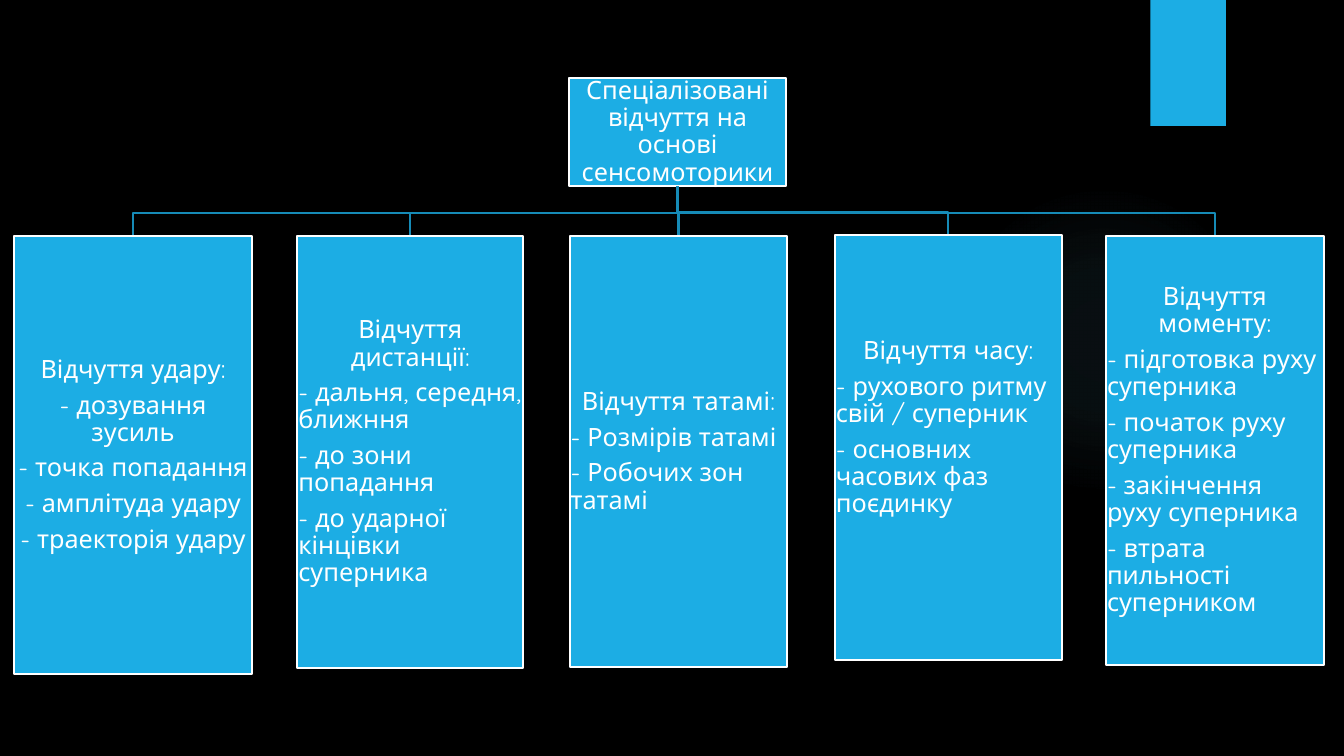
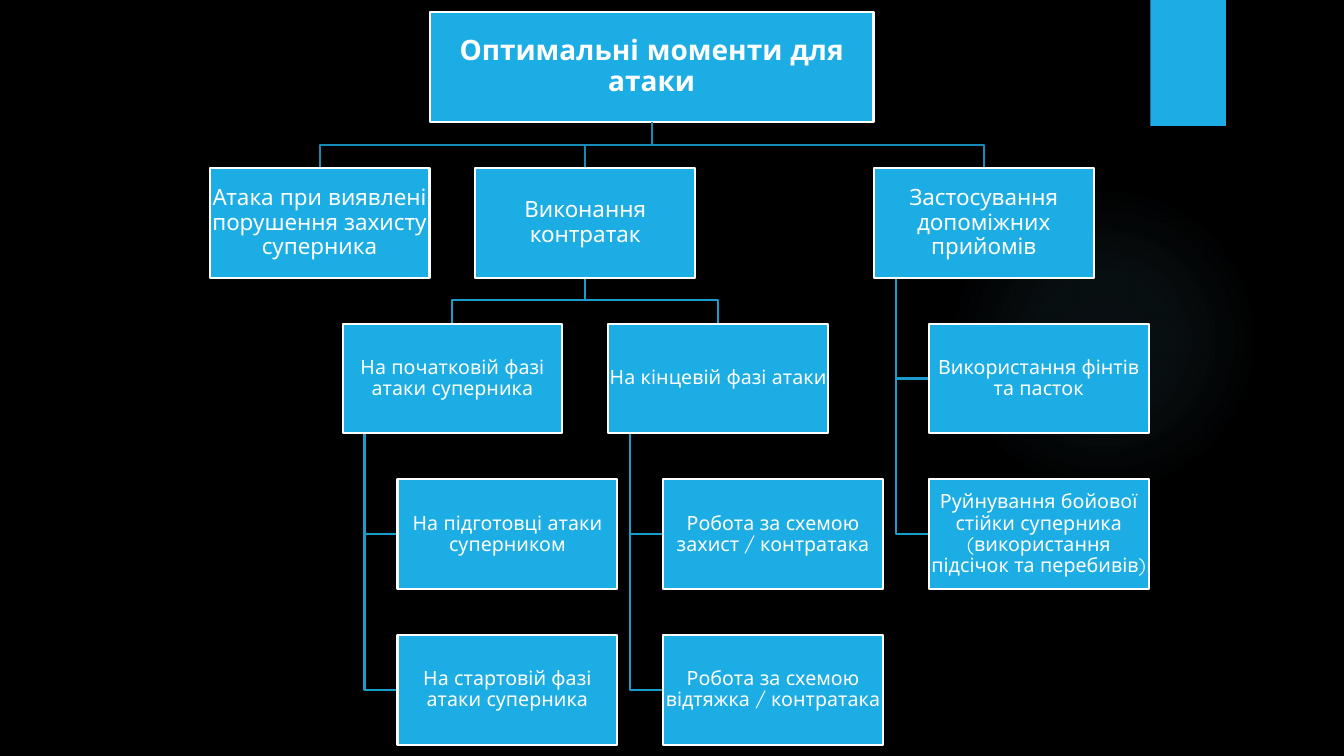
from dataclasses import dataclass, field

from pptx import Presentation
from pptx.dml.color import RGBColor
from pptx.enum.shapes import MSO_SHAPE
from pptx.enum.text import MSO_ANCHOR, MSO_AUTO_SIZE, PP_ALIGN
from pptx.oxml import parse_xml
from pptx.oxml.ns import nsdecls, qn
from pptx.util import Inches, Pt

RECTANGLE, ELLIPSE = MSO_SHAPE.RECTANGLE, MSO_SHAPE.OVAL
CENTER, LEFT = PP_ALIGN.CENTER, PP_ALIGN.LEFT
COLORS = {
    "background": "000000",
    "box": "1CADE4",
    "text": "FFFFFF",
    "glow": "77CEEF",
    "main_branch": "168BB7",
    "sub_branch": "199DCF",
}
FONT_NAME = "Quicksand"
FRAME_FORMAT = {
    "word_wrap": True,
    "auto_size": MSO_AUTO_SIZE.NONE,
    "vertical_anchor": MSO_ANCHOR.MIDDLE,
    "margin_left": Inches(0.01),
    "margin_right": Inches(0.01),
    "margin_top": Inches(0.01),
    "margin_bottom": Inches(0.01),
}
PARAGRAPH_FORMAT = {"line_spacing": 0.9, "space_before": Pt(0), "space_after": Pt(6)}
LINE_WIDTH = Pt(1.5)
GLOW_STOPS = [(0, 7), (36, 6), (69, 0)]


@dataclass
class Box:
    left: float
    top: float
    width: float
    height: float

    @property
    def center(self):
        return self.left + self.width / 2

    @property
    def middle(self):
        return self.top + self.height / 2

    @property
    def bottom(self):
        return self.top + self.height

    def lengths(self):
        return [Inches(v) for v in (self.left, self.top, self.width, self.height)]


@dataclass
class Moment:
    text: str
    column: float
    size: int
    children: list = field(default_factory=list)
    hanging: bool = False


SENSES_ROOT = Box(5.64, 0.77, 2.16, 1.08)
SENSES_TITLE = "Спеціалізовані відчуття на основі сенсомоторики"
SENSES = [
    (Box(10.97, 2.34, 2.16, 4.26), LEFT, 0.01, [
        "Відчуття моменту:", "- підготовка руху суперника", "- початок руху суперника",
        "- закінчення руху суперника", "- втрата пильності суперником"]),
    (Box(8.28, 2.33, 2.25, 4.22), LEFT, 0.4, [
        "Відчуття часу:", "- рухового ритму свій / суперник",
        "- основних часових фаз поєдинку"]),
    (Box(5.65, 2.34, 2.16, 4.28), LEFT, 0.01, [
        "Відчуття татамі:", "- Розмірів татамі", "- Робочих зон татамі"]),
    (Box(2.95, 2.34, 2.24, 4.29), LEFT, 0.01, [
        "Відчуття дистанції:", "- дальня, середня, ближння", "- до зони попадання",
        "- до ударної кінцівки суперника"]),
    (Box(0.14, 2.34, 2.36, 4.35), CENTER, 0.01, [
        "Відчуття удару:", "- дозування зусиль", "- точка попадання",
        "- амплітуда удару", "- траекторія удару"]),
]

MOMENTS_AREA = Box(2.08, 0.12, 9.31, 7.27)
MOMENTS_TITLE = "Оптимальні моменти для атаки"
MOMENTS = [
    Moment("Атака при виявлені порушення захисту суперника", 0, 16),
    Moment("Виконання контратак", 1, 16, [
        Moment("На початковій фазі атаки суперника", 0.5, 14, [
            Moment("На підготовці атаки суперником", 0.5, 14),
            Moment("На стартовій фазі атаки суперника", 0.5, 14)], True),
        Moment("На кінцевій фазі атаки", 1.5, 14, [
            Moment("Робота за схемою захист / контратака", 1.5, 14),
            Moment("Робота за схемою відтяжка / контратака", 1.5, 14)], True)]),
    Moment("Застосування допоміжних прийомів", 2.5, 16, [
        Moment("Використання фінтів та пасток", 2.5, 14),
        Moment("Руйнування бойової стійки суперника (використання підсічок та перебивів)",
               2.5, 14)], True),
]
CELL_WIDTH, CELL_HEIGHT = 2.18, 1.09
ROW_COUNT = 5


def color(name):
    return RGBColor.from_string(COLORS[name])


def apply(target, values):
    for name, value in values.items():
        setattr(target, name, value)


def paint(shape, fill, line=None):
    shape.fill.solid()
    shape.fill.fore_color.rgb = color(fill)
    if line:
        shape.line.color.rgb = color(line)
        shape.line.width = LINE_WIDTH
    else:
        shape.line.fill.background()


def write(frame, texts, size, bold=False, list_align=CENTER):
    apply(frame, FRAME_FORMAT)
    for index, text in enumerate(texts):
        paragraph = frame.paragraphs[0] if index == 0 else frame.add_paragraph()
        apply(paragraph, PARAGRAPH_FORMAT)
        paragraph.alignment = list_align if index else CENTER
        run = paragraph.add_run()
        run.text = text
        apply(run.font, {"name": FONT_NAME, "size": Pt(size), "bold": bold})
        run.font.color.rgb = color("text")


def add_box(slide, box, texts, size, list_align=CENTER):
    shape = slide.shapes.add_shape(RECTANGLE, *box.lengths())
    shape.shadow.inherit = False
    paint(shape, "box", "text")
    write(shape.text_frame, texts, size, list_align=list_align)
    return shape


def place_title(slide, box, text, size, bold=False):
    title = slide.shapes.title
    apply(title, dict(zip(("left", "top", "width", "height"), box.lengths())))
    paint(title, "box", "text")
    write(title.text_frame, [text], size, bold)


def add_branch(slide, points, color_name):
    start, *rest = [(Inches(x), Inches(y)) for x, y in points]
    builder = slide.shapes.build_freeform(*start)
    builder.add_line_segments(rest, close=False)
    branch = builder.convert_to_shape()
    branch.shadow.inherit = False
    branch.fill.background()
    branch.line.color.rgb = color(color_name)
    branch.line.width = LINE_WIDTH


def branch_down(slide, parent, child, color_name):
    turn = child.top - 0.23
    add_branch(slide, [(parent.center, parent.bottom), (parent.center, turn),
                       (child.center, turn), (child.center, child.top)], color_name)


def branch_aside(slide, parent, child, color_name):
    stem = parent.left + parent.width / 10
    add_branch(slide, [(stem, parent.bottom), (stem, child.middle),
                       (child.left, child.middle)], color_name)


def decorate_master(master, slide):
    master.background.fill.solid()
    master.background.fill.fore_color.rgb = color("background")
    glow = slide.shapes.add_shape(ELLIPSE, *Box(9.41, 1.83, 3.08, 3.08).lengths())
    tab = slide.shapes.add_shape(RECTANGLE, *Box(11.41, 0, 0.75, 1.25).lengths())
    for shape in (glow, tab):
        shape.shadow.inherit = False
        paint(shape, "box")
        master.shapes.element.append(shape.element)
    stops = "".join(
        f'<a:gs pos="{position * 1000}"><a:srgbClr val="{COLORS["glow"]}">'
        f'<a:alpha val="{alpha * 1000}"/></a:srgbClr></a:gs>'
        for position, alpha in GLOW_STOPS)
    gradient = parse_xml(
        f'<a:gradFill {nsdecls("a")}><a:gsLst>{stops}</a:gsLst><a:path path="circle">'
        '<a:fillToRect l="50000" t="50000" r="50000" b="50000"/></a:path></a:gradFill>')
    properties = glow.element.spPr
    properties.replace(properties.find(qn("a:solidFill")), gradient)


def senses_slide(slide):
    place_title(slide, SENSES_ROOT, SENSES_TITLE, 18)
    for box, *_ in SENSES:
        branch_down(slide, SENSES_ROOT, box, "main_branch")
    for box, align, bottom_margin, texts in SENSES:
        sense = add_box(slide, box, texts, 18, align)
        sense.text_frame.margin_bottom = Inches(bottom_margin)


def moment_box(area, column, row, indent=0):
    row_step = (area.height - CELL_HEIGHT) / (ROW_COUNT - 1)
    column_step = CELL_WIDTH + row_step - CELL_HEIGHT
    left = area.left + column * column_step + indent * CELL_WIDTH / 4
    return Box(left, area.top + row * row_step, CELL_WIDTH, CELL_HEIGHT)


def add_moment(slide, area, moment, box, row):
    for index, child in enumerate(moment.children):
        child_row = row + 1 + index * moment.hanging
        child_box = moment_box(area, child.column, child_row, moment.hanging)
        connect = branch_aside if moment.hanging else branch_down
        connect(slide, box, child_box, "sub_branch")
        add_moment(slide, area, child, child_box, child_row)
    add_box(slide, box, [moment.text], moment.size)


def moments_slide(slide, area):
    boxes = [moment_box(area, moment.column, 1) for moment in MOMENTS]
    root_width = 4.4
    root_center = (boxes[0].center + boxes[-1].center) / 2
    root = Box(root_center - root_width / 2, area.top, root_width, CELL_HEIGHT)
    place_title(slide, root, MOMENTS_TITLE, 20, True)
    for moment, box in zip(MOMENTS, boxes):
        branch_down(slide, root, box, "main_branch")
        add_moment(slide, area, moment, box, 1)


def main():
    deck = Presentation()
    deck.slide_width, deck.slide_height = Inches(13.33), Inches(7.5)
    title_only = deck.slide_layouts[5]
    senses, moments = [deck.slides.add_slide(title_only) for _ in range(2)]
    decorate_master(deck.slide_master, senses)
    senses_slide(senses)
    moments_slide(moments, MOMENTS_AREA)
    deck.save("out.pptx")


if __name__ == "__main__":
    main()
